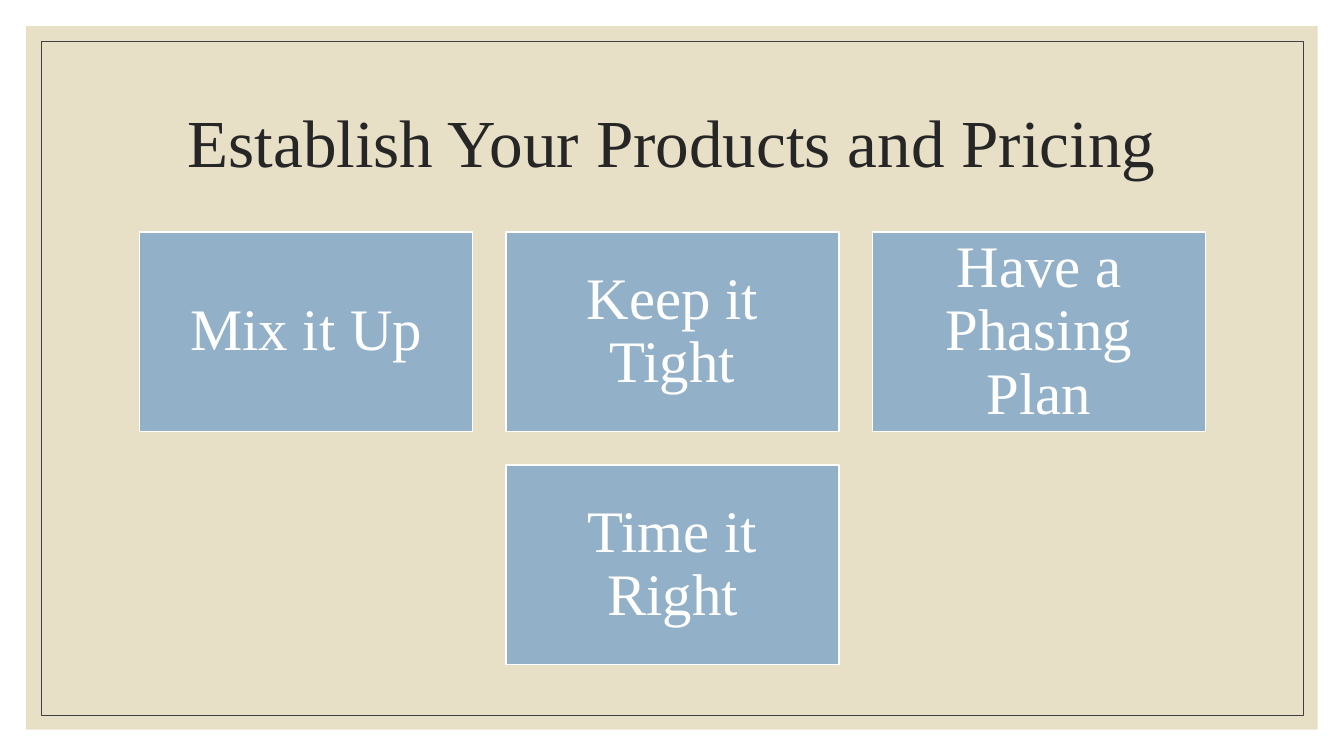
from pptx import Presentation
from pptx.dml.color import RGBColor
from pptx.enum.shapes import MSO_SHAPE as Preset
from pptx.enum.text import MSO_ANCHOR as Anchor, PP_ALIGN as Align
from pptx.util import Pt

EMU_PER_PX = 9525
FONT = "Times New Roman"
CARD_ROWS = [["Mix it Up", "Keep it Tight", "Have a Phasing Plan"], ["Time it Right"]]


def px(length):
    return int(length * EMU_PER_PX)


def color(hex_string):
    return RGBColor.from_string(hex_string)


def write_text(shape, text, size, hex_color, inset=(10, 5)):
    frame = shape.text_frame
    frame.word_wrap = True
    frame.vertical_anchor = Anchor.MIDDLE
    frame.margin_left = frame.margin_right = px(inset[0])
    frame.margin_top = frame.margin_bottom = px(inset[1])
    paragraph = frame.paragraphs[0]
    paragraph.alignment = Align.CENTER
    paragraph.line_spacing = 0.9
    run = paragraph.add_run()
    run.text = text
    run.font.name = FONT
    run.font.size = Pt(size)
    run.font.color.rgb = color(hex_color)


def add_rectangle(slide, box, fill=None, line=None, line_width=1):
    shape = slide.shapes.add_shape(Preset.RECTANGLE, *map(px, box))
    shape.shadow.inherit = False
    if fill:
        shape.fill.solid()
        shape.fill.fore_color.rgb = color(fill)
    else:
        shape.fill.background()
    if line:
        shape.line.color.rgb = color(line)
        shape.line.width = Pt(line_width)
    else:
        shape.line.fill.background()
    return shape


def add_background(slide, box, border=14):
    left, top, width, height = box
    add_rectangle(slide, box, fill="E7E0C7")
    inner = (left + border, top + border, width - 2 * border, height - 2 * border)
    add_rectangle(slide, inner, line="404040", line_width=0.5)


def add_title(slide, box, text):
    title = slide.shapes.title
    title.left, title.top, title.width, title.height = map(px, box)
    write_text(title, text, size=48, hex_color="262626")
    title.element.getparent().append(title.element)


def add_cards(slide, box, rows, gap=32):
    left, top, width, height = box
    columns = max(map(len, rows))
    card_width = (width - gap * (columns - 1)) / columns
    card_height = (height - gap * (len(rows) - 1)) / len(rows)
    for row, labels in enumerate(rows):
        row_width = len(labels) * (card_width + gap) - gap
        row_left = left + (width - row_width) / 2
        for column, label in enumerate(labels):
            card_box = (row_left + column * (card_width + gap),
                        top + row * (card_height + gap), card_width, card_height)
            card = add_rectangle(slide, card_box, fill="92B0C8", line="FFFFFF")
            write_text(card, label, size=42, hex_color="FFFFFF", inset=(16, 16))


def main():
    presentation = Presentation()
    presentation.slide_width, presentation.slide_height = px(1280), px(720)
    slide = presentation.slides.add_slide(presentation.slide_layouts[5])
    add_background(slide, (25, 25, 1230, 670))
    add_title(slide, (112, 67, 1056, 144), "Establish Your Products and Pricing")
    add_cards(slide, (133, 221, 1015, 412), CARD_ROWS)
    presentation.save("out.pptx")


if __name__ == "__main__":
    main()
